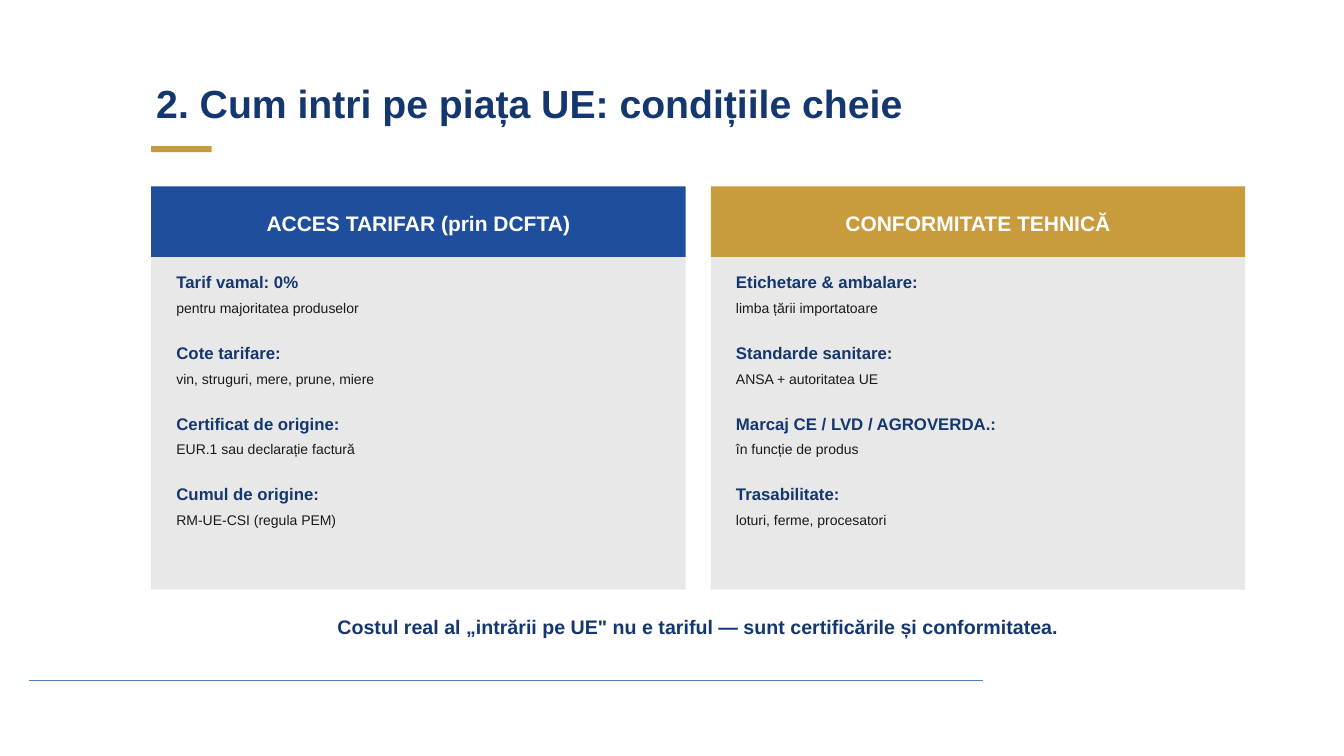
from dataclasses import dataclass

from lxml import etree
from pptx import Presentation
from pptx.dml.color import RGBColor
from pptx.enum.shapes import MSO_CONNECTOR, MSO_SHAPE
from pptx.enum.text import MSO_ANCHOR, MSO_AUTO_SIZE, PP_ALIGN
from pptx.oxml.ns import qn
from pptx.util import Inches, Pt

RECTANGLE = MSO_SHAPE.RECTANGLE
STRAIGHT = MSO_CONNECTOR.STRAIGHT
TOP, MIDDLE = MSO_ANCHOR.TOP, MSO_ANCHOR.MIDDLE
LEFT, CENTER = PP_ALIGN.LEFT, PP_ALIGN.CENTER
GROW = MSO_AUTO_SIZE.SHAPE_TO_FIT_TEXT


@dataclass(frozen=True)
class Theme:
    font: str = "Arial"
    navy: str = "14376F"
    blue: str = "1F4E9D"
    gold: str = "C89B3C"
    panel: str = "E8E8E8"
    ink: str = "1A1A1A"
    white: str = "FFFFFF"
    rule: str = "4F81BD"
    title_size: int = 28
    header_size: int = 15
    closing_size: int = 14
    term_size: int = 12
    detail_size: int = 10


theme = Theme()

COLUMNS = [
    ("ACCES TARIFAR (prin DCFTA)", theme.blue, [
        ("Tarif vamal: 0%", "pentru majoritatea produselor"),
        ("Cote tarifare:", "vin, struguri, mere, prune, miere"),
        ("Certificat de origine:", "EUR.1 sau declarație factură"),
        ("Cumul de origine:", "RM-UE-CSI (regula PEM)"),
    ]),
    ("CONFORMITATE TEHNICĂ", theme.gold, [
        ("Etichetare & ambalare:", "limba țării importatoare"),
        ("Standarde sanitare:", "ANSA + autoritatea UE"),
        ("Marcaj CE / LVD / AGROVERDA.:", "în funcție de produs"),
        ("Trasabilitate:", "loturi, ferme, procesatori"),
    ]),
]
MARGIN = 1.5
COLUMN_WIDTH = 5.3
COLUMN_STEP = 5.55
FIRST_ROW = 2.65
ROW_STEP = 0.7

deck = Presentation()
deck.slide_width, deck.slide_height = Inches(13.33), Inches(7.5)
page = deck.slides.add_slide(deck.slide_layouts[6])


def add_block(left, top, width, height, color):
    block = page.shapes.add_shape(
        RECTANGLE, Inches(left), Inches(top), Inches(width), Inches(height))
    block.shadow.inherit = False
    block.fill.solid()
    block.fill.fore_color.rgb = RGBColor.from_string(color)
    block.line.fill.background()


def add_text(text, left, top, width, height, size, color,
             bold=True, align=LEFT, anchor=TOP):
    box = page.shapes.add_textbox(
        Inches(left), Inches(top), Inches(width), Inches(height))
    frame = box.text_frame
    frame.word_wrap = True
    frame.auto_size = GROW
    frame.vertical_anchor = anchor
    frame.margin_left = frame.margin_right = Inches(0.05)
    frame.margin_top = frame.margin_bottom = Inches(0.02)
    para = frame.paragraphs[0]
    para.text = text
    para.alignment = align
    para.line_spacing = 1.15
    para.font.name = theme.font
    para.font.size = Pt(size)
    para.font.bold = bold
    para.font.color.rgb = RGBColor.from_string(color)


footer_rule = page.shapes.add_connector(
    STRAIGHT, Inches(9.75), Inches(6.75), Inches(0.29), Inches(6.75))
footer_rule.line.color.rgb = RGBColor.from_string(theme.rule)
footer_rule.line.width = Pt(0.75)
etree.SubElement(footer_rule._element.spPr, qn("a:effectLst"))

add_text("2. Cum intri pe piața UE: condițiile cheie",
         MARGIN, 0.7, 11, 0.7, theme.title_size, theme.navy)
add_block(MARGIN, 1.45, 0.6, 0.06, theme.gold)

for column, (header, color, rows) in enumerate(COLUMNS):
    left = MARGIN + column * COLUMN_STEP
    add_block(left, 1.85, COLUMN_WIDTH, 0.7, color)
    add_text(header, left, 1.95, COLUMN_WIDTH, 0.5, theme.header_size,
             theme.white, align=CENTER, anchor=MIDDLE)
    add_block(left, 2.55, COLUMN_WIDTH, 3.3, theme.panel)
    for row, (term, detail) in enumerate(rows):
        top = FIRST_ROW + row * ROW_STEP
        add_text(term, left + 0.2, top, 5, 0.3, theme.term_size, theme.navy)
        add_text(detail, left + 0.2, top + 0.28, 5, 0.35,
                 theme.detail_size, theme.ink, bold=False)

add_text("Costul real al „intrării pe UE\" nu e tariful — sunt certificările și conformitatea.",
         MARGIN, 6.05, COLUMN_STEP + COLUMN_WIDTH, 0.4,
         theme.closing_size, theme.navy, align=CENTER)

deck.save("out.pptx")
